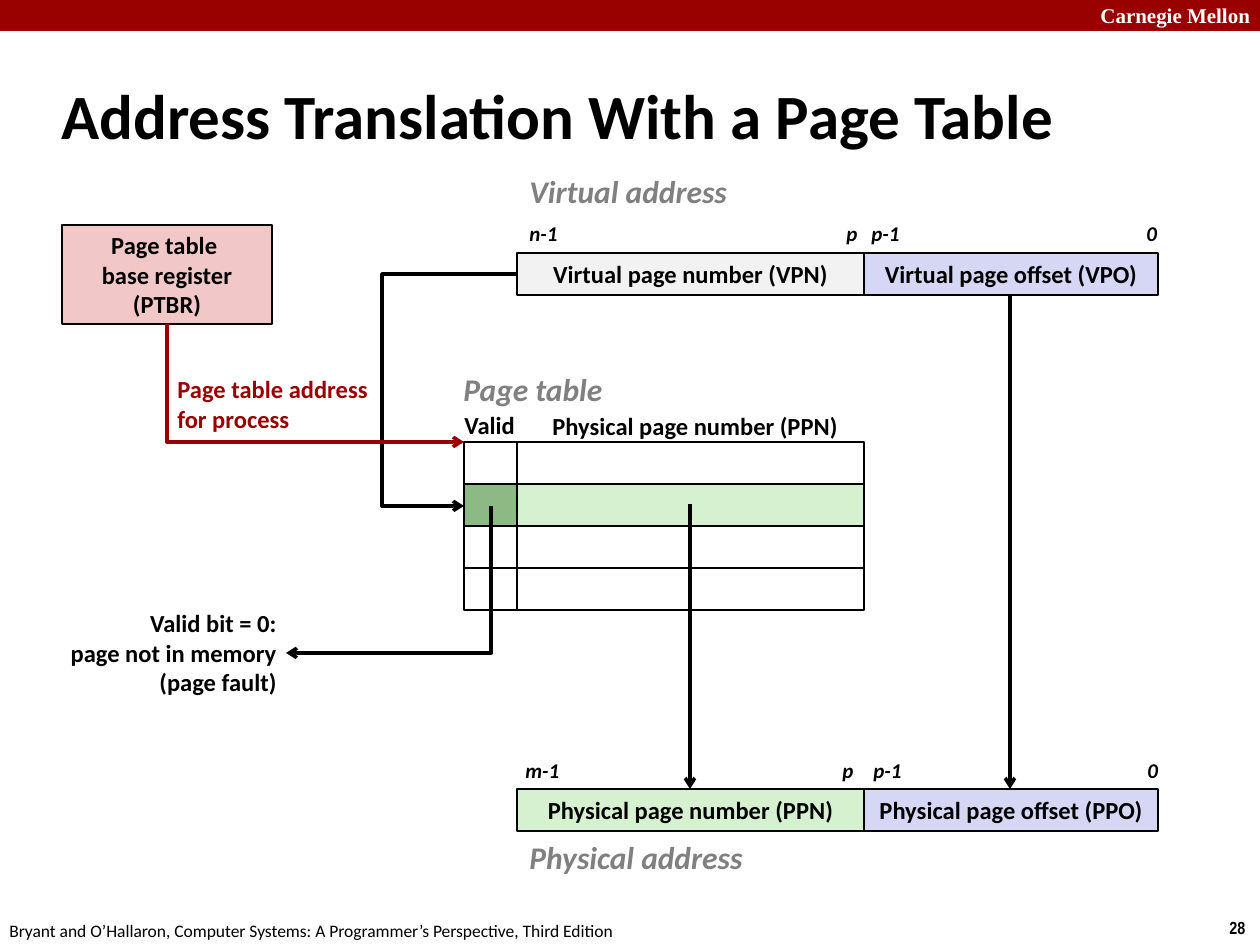
from lxml import etree
from pptx import Presentation
from pptx import util as u
from pptx.dml.color import RGBColor
from pptx.enum import shapes, text
from pptx.oxml.ns import qn

SCALE = u.Inches(1) / 126
COLORS = {
    "black": "000000", "white": "FFFFFF", "red": "990000", "gray": "808080",
    "vpn": "F2F2F2", "offset": "D6D6F5", "ppn": "D5F1CF",
    "valid": "8DBA84", "register": "F1C7C7",
}
ALIGN = {"l": text.PP_ALIGN.LEFT, "c": text.PP_ALIGN.CENTER, "r": text.PP_ALIGN.RIGHT}


def px(*lengths):
    return [u.Emu(round(length * SCALE)) for length in lengths]


def write(words, at=None, box=None, size=14, font="Calibri", color="black",
          bold=True, italic=False, align="l", middle=False):
    """Fill the given shape, or a new text box, with one paragraph per line."""
    box = box or slide.shapes.add_textbox(*px(*at))
    frame = box.text_frame
    frame.word_wrap = False
    frame.vertical_anchor = text.MSO_ANCHOR.MIDDLE if middle else text.MSO_ANCHOR.TOP
    frame.text = words
    for para in frame.paragraphs:
        para.alignment = ALIGN[align]
        for span in para.runs:
            span.font.size = u.Pt(size)
            span.font.name = font
            span.font.bold = bold
            span.font.italic = italic
            span.font.color.rgb = RGBColor.from_string(COLORS[color])


deck = Presentation()
deck.slide_width, deck.slide_height = px(1260, 945)
slide = deck.slides.add_slide(deck.slide_layouts[6])

# Boxes: banner, register, both addresses and the page table
PPN_LEFT, PPN_WIDTH = 517, 347
OFFSET_LEFT, OFFSET_WIDTH = 864, 294
VALID_LEFT, VALID_WIDTH = 464, 53
TABLE_TOP, ROW = 442, 42
boxes = [
    (0, 0, 1260, 31, "red", ""),
    (PPN_LEFT, 253, PPN_WIDTH, ROW, "vpn", "Virtual page number (VPN)"),
    (OFFSET_LEFT, 253, OFFSET_WIDTH, ROW, "offset", "Virtual page offset (VPO)"),
    (PPN_LEFT, 789, PPN_WIDTH, ROW, "ppn", "Physical page number (PPN)"),
    (OFFSET_LEFT, 789, OFFSET_WIDTH, ROW, "offset", "Physical page offset (PPO)"),
    (62, 225, 210, 99, "register", "Page table \vbase register\n(PTBR)"),
]
for row in range(4):
    top = TABLE_TOP + row * ROW
    hit = row == 1
    boxes.append((PPN_LEFT, top, PPN_WIDTH, ROW, "ppn" if hit else None, ""))
    boxes.append((VALID_LEFT, top, VALID_WIDTH, ROW, "valid" if hit else None, ""))

for left, top, width, height, fill, label in boxes:
    box = slide.shapes.add_shape(shapes.MSO_SHAPE.RECTANGLE, *px(left, top, width, height))
    box.shadow.inherit = False
    if fill:
        box.fill.solid()
        box.fill.fore_color.rgb = RGBColor.from_string(COLORS[fill])
    else:
        box.fill.background()
    if fill == "red":
        box.line.fill.background()
    else:
        box.line.color.rgb = RGBColor.from_string(COLORS["black"])
        box.line.width = u.Pt(1)
    if label:
        write(label, box=box, align="c", middle=True)

# Banner, title and footer
write("Carnegie Mellon", at=(1088, -4, 180, 38), size=12, font="Times New Roman", color="white")
write("Address Translation With a Page Table", at=(49, 62, 1046, 105), size=36, middle=True)
write("Bryant and O’Hallaron, Computer Systems: A Programmer’s Perspective, Third Edition",
      at=(-3, 914, 640, 34), size=10, bold=False)
write("28", at=(1217, 911, 43, 34), size=10, font="Arial Narrow")

# Headings
for words, left, top, width in [("Virtual address", 517, 166, 224),
                                ("Physical address", 517, 832, 241),
                                ("Page table", 451, 364, 179)]:
    write(words, at=(left, top, width, 50), size=18, color="gray", italic=True)

# Labels
write("Valid", at=(452, 404, 77, 43))
write("Physical page number (PPN)", at=(540, 405, 312, 43))
write("Page table address\nfor process", at=(165, 368, 218, 72), color="red")
write("Valid bit = 0:\npage not in memory\n(page fault)", at=(57, 602, 232, 102), align="r")

# Bit positions
for top, marks in [(214, [("n-1", 517, 59), ("p", 834, 42), ("p-1", 859, 59), ("0", 1134, 42)]),
                   (751, [("m-1", 513, 64), ("p", 830, 42), ("p-1", 861, 59), ("0", 1135, 42)])]:
    for words, left, width in marks:
        write(words, at=(left, top, width, 38), size=12, italic=True)

# Arrows, each from its head back to its origin
STRAIGHT, ELBOW = shapes.MSO_CONNECTOR.STRAIGHT, shapes.MSO_CONNECTOR.ELBOW
for kind, preset, head, origin, color in [
    (ELBOW, "bentConnector3", (464, 506), (517, 274), "black"),
    (STRAIGHT, "line", (1010, 789), (1010, 296), "black"),
    (STRAIGHT, "line", (690, 789), (690, 504), "black"),
    (ELBOW, "bentConnector2", (286, 653), (491, 506), "black"),
    (ELBOW, "bentConnector2", (464, 442), (167, 324), "red"),
]:
    arrow = slide.shapes.add_connector(kind, *px(*head, *origin))
    arrow.line.color.rgb = RGBColor.from_string(COLORS[color])
    arrow.line.width = u.Pt(2)
    etree.SubElement(arrow.line._get_or_add_ln(), qn("a:headEnd"), type="arrow")
    properties = arrow._element.spPr
    etree.SubElement(properties, qn("a:effectLst"))
    geometry = properties.find(qn("a:prstGeom"))
    geometry.set("prst", preset)
    if preset == "bentConnector3":
        bend = round((382 - head[0]) / (origin[0] - head[0]) * 100000)
        etree.SubElement(geometry.find(qn("a:avLst")), qn("a:gd"), name="adj1", fmla=f"val {bend}")

deck.save("out.pptx")
